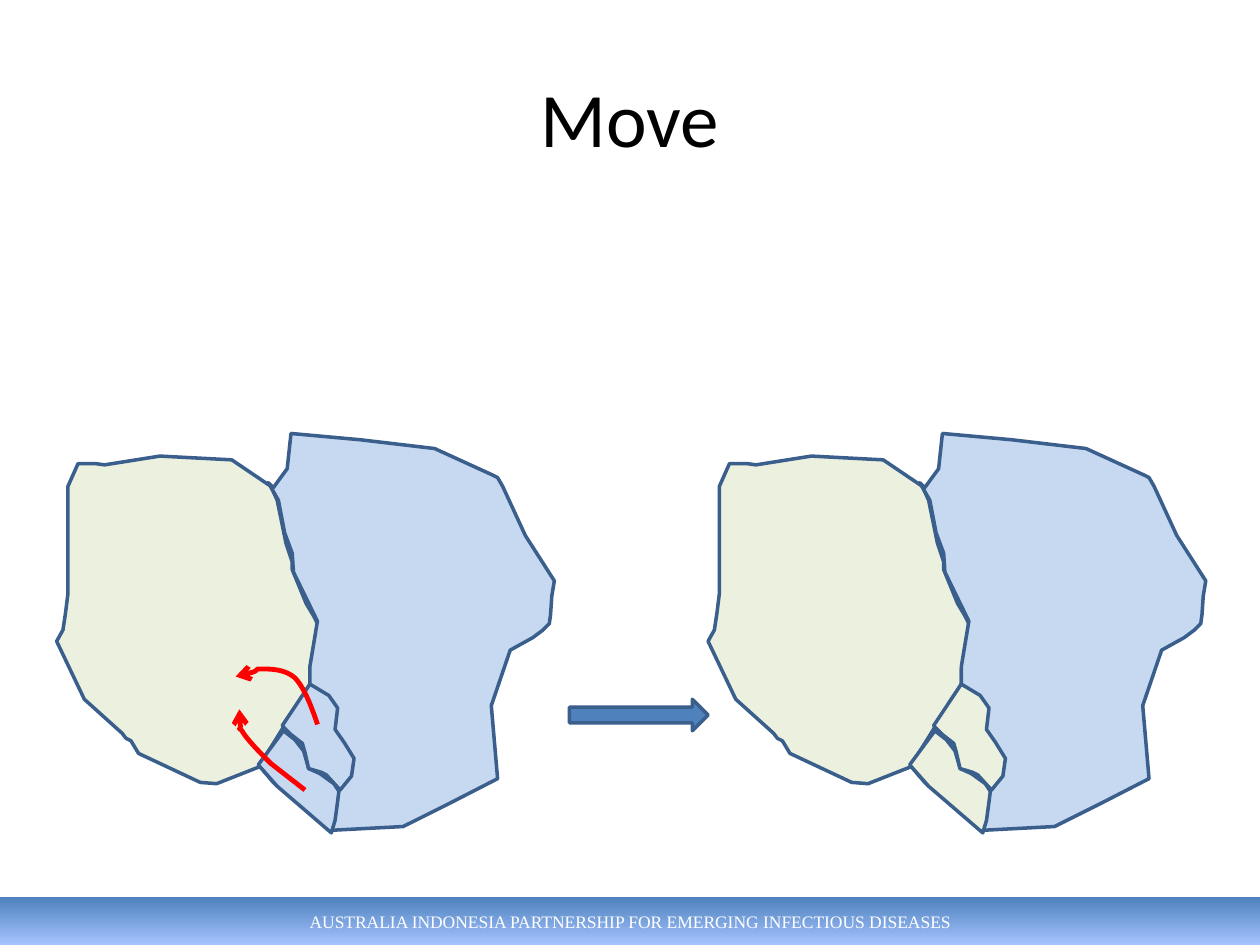
from lxml.etree import SubElement
from pptx import Presentation
from pptx.dml.color import RGBColor
from pptx.enum.shapes import MSO_SHAPE as Shape
from pptx.enum.text import MSO_ANCHOR as Anchor, PP_ALIGN as Align
from pptx.oxml.ns import qn
from pptx.util import Pt

PX = 9144
WHITE = RGBColor(0xFF, 0xFF, 0xFF)
BLACK = RGBColor(0, 0, 0)
RED = RGBColor(0xFF, 0, 0)
BLUE = RGBColor(0x4F, 0x81, 0xBD)
PALE = RGBColor(0xA4, 0xC4, 0xFF)
EDGE = RGBColor(0x3A, 0x5F, 0x8C)
GREEN = RGBColor(0xEB, 0xF1, 0xDE)
SKY = RGBColor(0xC6, 0xD9, 0xF1)

WEST = [(38, 25), (82, 18), (139, 21), (170, 42), (175, 53), (182, 87),
        (187, 102), (187, 108), (198, 135), (204, 145), (207, 151),
        (201, 188), (201, 201), (160, 265), (127, 278), (114, 277),
        (65, 254), (59, 244), (55, 242), (52, 238), (22, 211), (0, 165),
        (5, 156), (7, 143), (9, 127), (9, 88), (9, 42), (17, 24), (31, 24)]
EAST = [(168, 39), (176, 53), (181, 79), (187, 95), (188, 110), (207, 149),
        (201, 185), (201, 199), (161, 264), (172, 277), (217, 315),
        (275, 312), (311, 294), (350, 274), (345, 216), (360, 172),
        (378, 162), (386, 156), (391, 151), (392, 144), (393, 129),
        (395, 117), (372, 81), (354, 42), (350, 35), (346, 33), (300, 12),
        (241, 5), (186, 0), (183, 28), (172, 43)]
SOUTH = [(160, 263), (180, 236), (189, 243), (196, 252), (200, 266),
         (209, 270), (220, 278), (224, 284), (223, 292), (221, 307),
         (218, 317), (175, 280)]
NORTH = [(179, 232), (201, 199), (216, 208), (223, 218), (221, 235),
         (228, 245), (236, 258), (234, 272), (225, 283), (214, 271),
         (210, 269), (200, 266), (197, 253), (195, 246), (186, 239)]
CURVES = [
    [(207, 231), (202, 216), (196, 201), (189, 194), (181, 187),
     (170, 187), (162, 187), (154, 187), (167, 188), (142, 193)],
    [(197, 283), (188, 276), (179, 269), (170, 262), (162, 254),
     (151, 243), (147, 236), (142, 229), (148, 245), (145, 219)],
]


def emu(*vals):
    return [round(val * PX) for val in vals]


def trace(shapes, left, top, points, closed):
    spots = [emu(left + x, top + y) for x, y in points]
    pen = shapes.build_freeform(*spots[0])
    pen.add_line_segments(spots[1:], close=closed)
    shape = pen.convert_to_shape()
    shape.shadow.inherit = False
    return shape


def stroke(shape, color, width):
    shape.line.color.rgb = color
    shape.line.width = Pt(width)


def bend(knots, steps=10):
    points = [knots[0]]
    for i in range(0, len(knots) - 1, 3):
        for step in range(1, steps + 1):
            t = step / steps
            u = 1 - t
            rates = (u ** 3, 3 * u * u * t, 3 * u * t * t, t ** 3)
            points.append(tuple(
                sum(rate * knot[axis] for rate, knot in zip(rates, knots[i:i + 4]))
                for axis in (0, 1)))
    return points


def add_title(slide, left, top, width, height):
    title = slide.shapes.title
    title.left, title.top, title.width, title.height = emu(left, top, width, height)
    frame = title.text_frame
    frame.text = "Move"
    frame.vertical_anchor = Anchor.MIDDLE
    style(frame.paragraphs[0], "Calibri", 44, BLACK)


def style(para, name, size, color):
    para.alignment = Align.CENTER
    font = para.runs[0].font
    font.name, font.size = name, Pt(size)
    font.color.rgb = color


def add_map(slide, left, top, moved):
    group = slide.shapes.add_group_shape()
    for points, color in ((WEST, GREEN), (EAST, SKY), (SOUTH, moved), (NORTH, moved)):
        land = trace(group.shapes, left, top, points, True)
        land.fill.solid()
        land.fill.fore_color.rgb = color
        stroke(land, EDGE, 2)


def add_moves(slide, left, top):
    for knots in CURVES:
        curve = trace(slide.shapes, left, top, bend(knots), False)
        curve.fill.background()
        stroke(curve, RED, 2.75)
        line = curve.element.spPr.find(qn("a:ln"))
        SubElement(line, qn("a:tailEnd")).set("type", "arrow")


def add_arrow(slide, left, top, width, height):
    arrow = slide.shapes.add_shape(Shape.RIGHT_ARROW, *emu(left, top, width, height))
    arrow.shadow.inherit = False
    arrow.fill.solid()
    arrow.fill.fore_color.rgb = BLUE
    stroke(arrow, EDGE, 2)


def add_footer(slide, left, top, width, height):
    bar = slide.shapes.add_shape(Shape.RECTANGLE, *emu(left, top, width, height))
    bar.shadow.inherit = False
    bar.fill.gradient()
    bar.fill.gradient_angle = 270
    for stop, color, place in zip(bar.fill.gradient_stops, (BLUE, PALE), (0, 1)):
        stop.color.rgb = color
        stop.position = place
    bar.line.fill.background()
    frame = bar.text_frame
    frame.text = "AUSTRALIA INDONESIA PARTNERSHIP FOR EMERGING INFECTIOUS DISEASES"
    frame.vertical_anchor = Anchor.MIDDLE
    style(frame.paragraphs[0], "Times New Roman", 10, WHITE)


def main():
    deck = Presentation()
    deck.slide_width, deck.slide_height = emu(1000, 750)
    slide = deck.slides.add_slide(deck.slide_layouts[5])
    add_footer(slide, 0, 712, 1000, 38)
    add_title(slide, 50, 30, 900, 125)
    add_map(slide, 45, 344, SKY)
    add_map(slide, 562, 344, GREEN)
    add_arrow(slide, 452, 555, 110, 25)
    add_moves(slide, 45, 344)
    deck.save("out.pptx")


if __name__ == "__main__":
    main()
